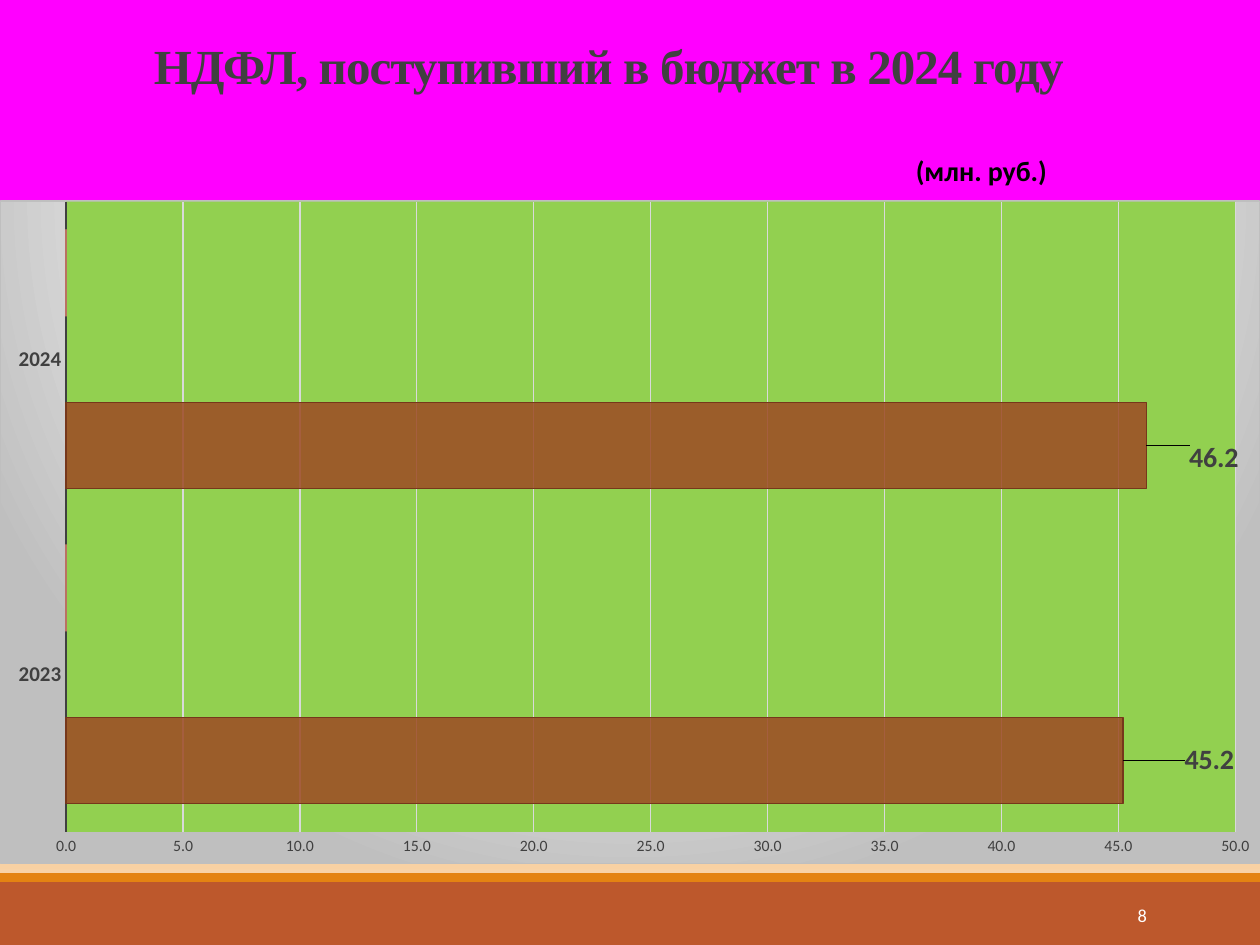
"""Build the slide on personal income tax received by the budget in 2024."""
from lxml import etree
from pptx import Presentation
from pptx.chart.data import CategoryChartData
from pptx.dml.color import RGBColor
from pptx.enum import chart as ch, shapes, text
from pptx.oxml import parse_xml
from pptx.oxml.ns import nsdecls, qn
from pptx.util import Inches, Pt

BLACK = RGBColor(0x00, 0x00, 0x00)
WHITE = RGBColor(0xFF, 0xFF, 0xFF)
DARK = RGBColor(0x40, 0x40, 0x40)
GRID = RGBColor(0xD9, 0xD9, 0xD9)
BORDER = RGBColor(0xBF, 0xBF, 0xBF)
RUST = RGBColor(0xBD, 0x58, 0x2C)
ORANGE = RGBColor(0xE4, 0x83, 0x12)
GREEN = RGBColor(0x92, 0xD0, 0x50)
BROWN = RGBColor(0x9D, 0x49, 0x24)
ROSE = RGBColor(0xD7, 0xAC, 0xA4)
BROWN_EDGE = RGBColor(0x76, 0x37, 0x1B)
RUST_EDGE = RGBColor(0x8E, 0x42, 0x21)
ROSE_EDGE = RGBColor(0xBA, 0x71, 0x62)
MAGENTA = RGBColor(0xFF, 0x00, 0xFF)
PEACH = RGBColor(0xF6, 0xC7, 0x91)
CREAM = RGBColor(0xF9, 0xDA, 0xB6)


def gradient(stops, direction):
    marks = "".join(f'<a:gs pos="{pos * 1000}"><a:srgbClr val="{color}"/></a:gs>'
                    for pos, color in stops)
    return parse_xml(f'<a:gradFill {nsdecls("a")} rotWithShape="1">'
                     f'<a:gsLst>{marks}</a:gsLst>{direction}</a:gradFill>')


def style(font, size, color, bold=False, name="Calibri"):
    font.size, font.bold, font.name = Pt(size), bold, name
    font.color.rgb = color


prs = Presentation()
prs.slide_width, prs.slide_height = Inches(10), Inches(7.5)
slide = prs.slides.add_slide(prs.slide_layouts[5])

slide.background.fill.gradient()
backdrop = slide.background._cSld.find(".//" + qn("a:gradFill"))
backdrop.getparent().replace(backdrop, gradient(
    [(55, MAGENTA), (74, PEACH), (83, PEACH), (100, CREAM)],
    '<a:lin ang="5400000" scaled="0"/>'))

for top, height, color in [(7, 0.5, RUST), (6.93, 0.07, ORANGE)]:
    band = slide.shapes.add_shape(shapes.MSO_SHAPE.RECTANGLE, Inches(0), Inches(top),
                                  Inches(10), Inches(height))
    band.shadow.inherit = False
    band.fill.solid()
    band.fill.fore_color.rgb = color
    band.line.fill.background()

title = slide.shapes.title
title.left, title.top, title.width, title.height = map(Inches, (0.23, 0.3, 9.2, 0.82))
title.text_frame.text = "НДФЛ, поступивший в бюджет в 2024 году"
title.text_frame.vertical_anchor = text.MSO_ANCHOR.TOP
heading = title.text_frame.paragraphs[0]
heading.alignment = text.PP_ALIGN.CENTER
heading.line_spacing = 0.85
style(heading.font, 28, DARK, True, "Times New Roman")
heading.runs[0].font._element.set("spc", "-50")

captions = [
    ("8", (8.12, 7.06, 1.08, 0.4), 10.5, WHITE, False,
     text.PP_ALIGN.RIGHT, text.MSO_ANCHOR.MIDDLE),
    ("(млн. руб.)", (7.17, 1.17, 1.46, 0.37), 16, BLACK, True,
     text.PP_ALIGN.LEFT, text.MSO_ANCHOR.TOP),
]
for words, place, size, color, bold, alignment, anchor in captions:
    frame = slide.shapes.add_textbox(*map(Inches, place)).text_frame
    frame.word_wrap = True
    frame.vertical_anchor = anchor
    frame.text = words
    frame.paragraphs[0].alignment = alignment
    style(frame.paragraphs[0].font, size, color, bold)

income = CategoryChartData(number_format="#,##0.0")
income.categories = ["2023", "2024"]
income.add_series("Series 1", (45.2, 46.2))
income.add_series("Series 2", (None, None))
income.add_series("Series 3", (0, 0))
chart = slide.shapes.add_chart(ch.XL_CHART_TYPE.BAR_CLUSTERED, Inches(0), Inches(1.59),
                               Inches(10), Inches(5.27), income).chart
chart.has_legend = chart.has_title = False
style(chart.font, 10, BLACK)

years = chart.category_axis
years.major_tick_mark = ch.XL_TICK_MARK.NONE
style(years.tick_labels.font, 12, DARK, True)
years.format.line.color.rgb = DARK
years.format.line.width = Pt(1.5)

amounts = chart.value_axis
amounts.minimum_scale, amounts.maximum_scale, amounts.major_unit = 0, 50, 5
amounts.major_tick_mark = ch.XL_TICK_MARK.NONE
style(amounts.tick_labels.font, 9, DARK)
amounts.tick_labels.number_format = "#,##0.0"
amounts.tick_labels.number_format_is_linked = False
amounts.format.line.fill.background()
amounts.major_gridlines.format.line.color.rgb = GRID
amounts.major_gridlines.format.line.width = Pt(0.75)

bars = chart.plots[0]
bars.gap_width, bars.overlap, bars.vary_by_categories = 65, 0, False
series_colors = [(BROWN, BROWN_EDGE), (RUST, RUST_EDGE), (ROSE, ROSE_EDGE)]
for series, (color, edge) in zip(bars.series, series_colors):
    series.format.fill.solid()
    series.format.fill.fore_color.rgb = color
    series.format.line.color.rgb = edge
    series.format.line.width = Pt(0.75)
    tint = series._element.find(qn("c:spPr")).find(qn("a:solidFill"))[0]
    etree.SubElement(tint, qn("a:alpha")).set("val", "85000")

received = bars.series[0]
for index, (shift_x, shift_y) in enumerate([(0.045, 0), (0.03, 0.02)]):
    label = received.points[index].data_label
    style(label.font, 16, DARK, True)
    label.position = ch.XL_LABEL_POSITION.OUTSIDE_END
    mark = received._element.findall(".//" + qn("c:dLbl"))[index]
    mark.insert(1, parse_xml(
        f'<c:layout {nsdecls("c")}><c:manualLayout>'
        f'<c:x val="{shift_x}"/><c:y val="{shift_y}"/></c:manualLayout></c:layout>'))

plot_area = chart._chartSpace.chart.plotArea
for old_layout in plot_area.findall(qn("c:layout")):
    plot_area.remove(old_layout)
plot_area.insert(0, parse_xml(
    f'<c:layout {nsdecls("c")}><c:manualLayout><c:layoutTarget val="inner"/>'
    '<c:xMode val="edge"/><c:yMode val="edge"/><c:x val="0.052"/><c:y val="0.001"/>'
    '<c:w val="0.929"/><c:h val="0.951"/></c:manualLayout></c:layout>'))
plot_area.append(parse_xml(
    f'<c:spPr {nsdecls("c", "a")}><a:solidFill><a:srgbClr val="{GREEN}"/></a:solidFill>'
    '<a:ln><a:noFill/></a:ln></c:spPr>'))

frame_format = parse_xml(
    f'<c:spPr {nsdecls("c", "a")}><a:ln w="9525"><a:solidFill>'
    f'<a:srgbClr val="{BORDER}"/></a:solidFill></a:ln></c:spPr>')
frame_format.insert(0, gradient(
    [(0, WHITE), (39, WHITE), (100, BORDER)],
    '<a:path path="circle"><a:fillToRect l="50000" t="-80000" r="50000" b="180000"/></a:path>'))
chart._chartSpace.chart.addnext(frame_format)

prs.save("out.pptx")
